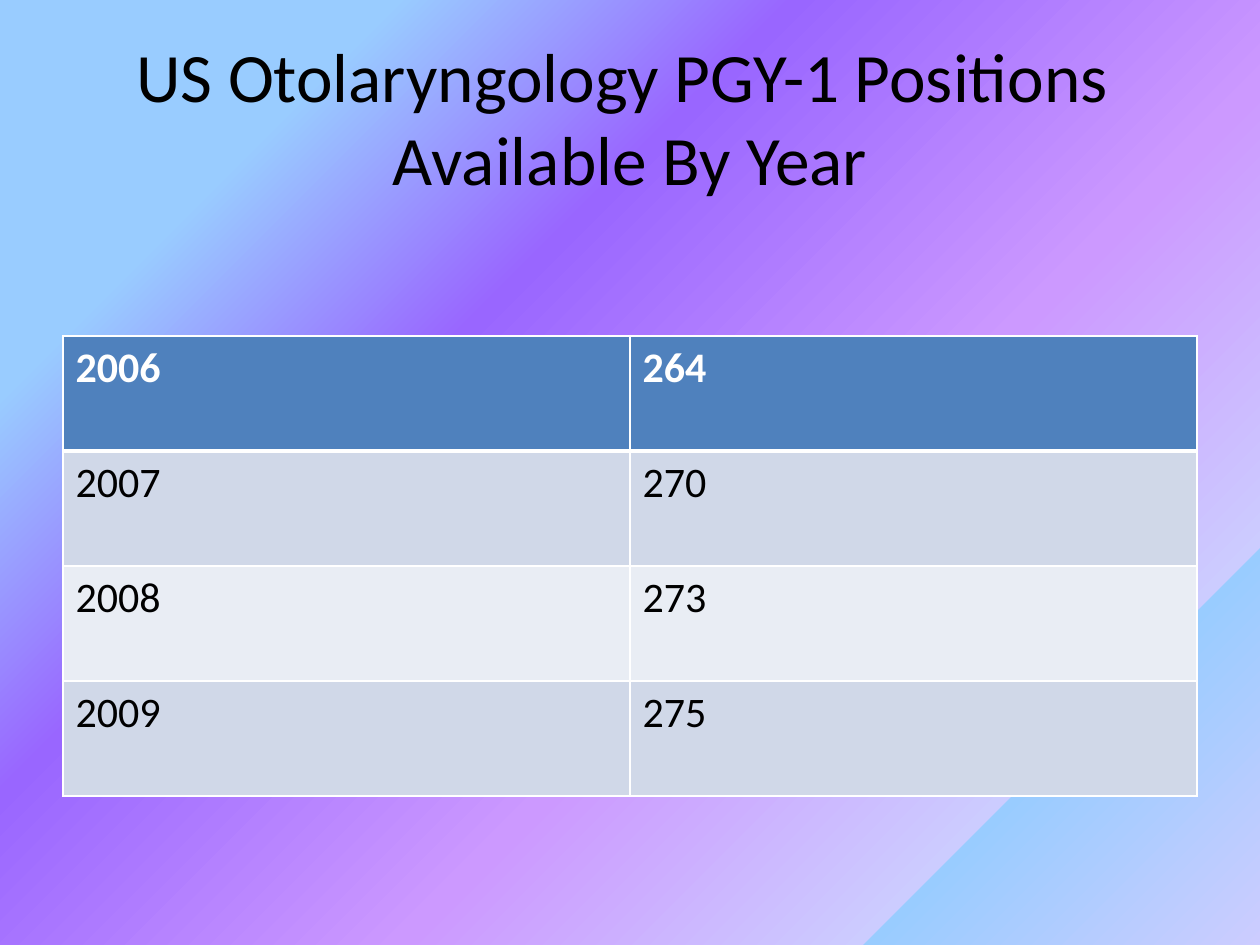
from pptx import Presentation
from pptx.dml.color import RGBColor
from pptx.enum.text import MSO_ANCHOR, PP_ALIGN
from pptx.oxml import parse_xml
from pptx.oxml.ns import nsdecls
from pptx.util import Cm, Pt

FONT = "Calibri"
BLACK = RGBColor(0x00, 0x00, 0x00)
WHITE = RGBColor(0xFF, 0xFF, 0xFF)
HEADER_BLUE = RGBColor(0x4F, 0x81, 0xBD)
BAND_DARK = RGBColor(0xD0, 0xD8, 0xE8)
BAND_LIGHT = RGBColor(0xE9, 0xED, 0xF4)
SKY = RGBColor(0x99, 0xCC, 0xFF)
VIOLET = RGBColor(0x99, 0x66, 0xFF)
ORCHID = RGBColor(0xCC, 0x99, 0xFF)
LILAC = RGBColor(0xCC, 0xCC, 0xFF)

BACKGROUND_STOPS = [(18, SKY), (36, VIOLET), (61, ORCHID),
                    (82, LILAC), (82, SKY), (100, LILAC)]
TITLE_LINES = ["US Otolaryngology PGY-1 Positions ", "Available By Year"]
POSITIONS = [("2006", "264"), ("2007", "270"), ("2008", "273"), ("2009", "275")]


def add_run(paragraph, text, size, color, bold=False):
    run = paragraph.add_run()
    run.text = text
    run.font.name = FONT
    run.font.size = Pt(size)
    run.font.bold = bold
    run.font.color.rgb = color


def add_border(cell, side, points):
    cell._tc.get_or_add_tcPr().append(parse_xml(
        f'<a:ln{side} {nsdecls("a")} w="{Pt(points)}">'
        f'<a:solidFill><a:srgbClr val="{WHITE}"/></a:solidFill></a:ln{side}>'))


prs = Presentation()
prs.slide_width, prs.slide_height = Cm(25.4), Cm(19.05)
slide = prs.slides.add_slide(prs.slide_layouts[5])

# Diagonal gradient background
stops = "".join(f'<a:gs pos="{percent * 1000}"><a:srgbClr val="{color}"/></a:gs>'
                for percent, color in BACKGROUND_STOPS)
background = parse_xml(
    f'<p:bg {nsdecls("p", "a")}><p:bgPr><a:gradFill><a:gsLst>{stops}</a:gsLst>'
    '<a:lin ang="2700000" scaled="0"/></a:gradFill><a:effectLst/></p:bgPr></p:bg>')
slide.element.cSld.insert(0, background)

# Title
title = slide.shapes.title
title.left, title.top, title.width, title.height = Cm(1.27), Cm(0.76), Cm(22.86), Cm(3.18)
title.text_frame.vertical_anchor = MSO_ANCHOR.MIDDLE
heading = title.text_frame.paragraphs[0]
heading.alignment = PP_ALIGN.CENTER
for i, line in enumerate(TITLE_LINES):
    if i:
        heading.add_line_break()
    add_run(heading, line, 39.6, BLACK)

# Positions by year
table = slide.shapes.add_table(len(POSITIONS), 2, Cm(1.27), Cm(6.77),
                               Cm(22.86), Cm(9.28)).table
for r, record in enumerate(POSITIONS):
    header = r == 0
    fill = HEADER_BLUE if header else BAND_DARK if r % 2 else BAND_LIGHT
    for c, value in enumerate(record):
        cell = table.cell(r, c)
        add_run(cell.text_frame.paragraphs[0], value, 24,
                WHITE if header else BLACK, header)
        add_border(cell, "L", 1)
        add_border(cell, "R", 1)
        add_border(cell, "T", 3 if r == 1 else 1)
        add_border(cell, "B", 3 if header else 1)
        cell.fill.solid()
        cell.fill.fore_color.rgb = fill

prs.save("out.pptx")
